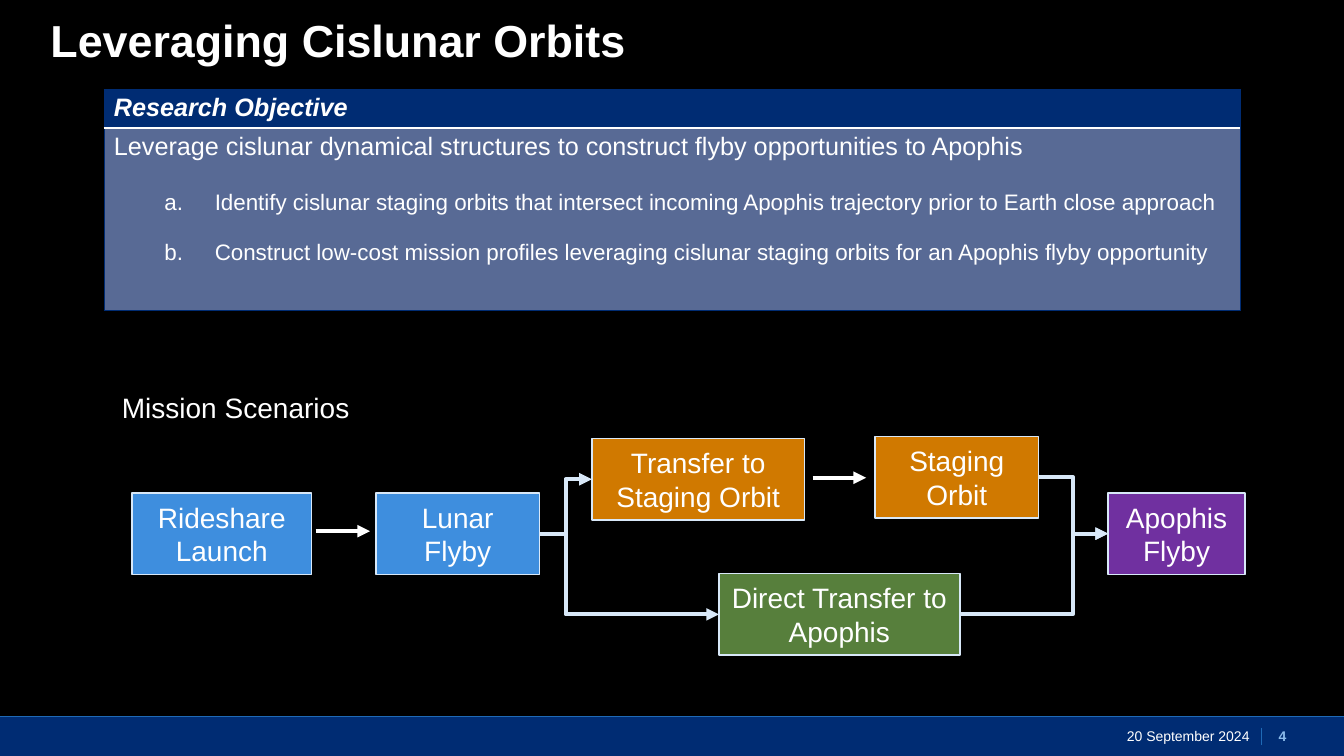
from dataclasses import dataclass

from pptx import Presentation
from pptx.dml.color import RGBColor
from pptx.enum.shapes import MSO_CONNECTOR as Link, MSO_SHAPE as Preset
from pptx.enum.text import MSO_ANCHOR as Anchor, MSO_AUTO_SIZE as AutoSize, PP_ALIGN as Align
from pptx.oxml.ns import qn
from pptx.oxml.xmlchemy import OxmlElement
from pptx.util import Pt

EMU_PER_PX = 9144
FONT = "Arial"
BLACK = RGBColor(0x00, 0x00, 0x00)
WHITE = RGBColor(0xFF, 0xFF, 0xFF)
NAVY = RGBColor(0x00, 0x2C, 0x73)
SLATE = RGBColor(0x58, 0x6A, 0x95)
RULE_BLUE = RGBColor(0x1F, 0x6A, 0xB6)
PALE = RGBColor(0xD8, 0xE8, 0xF8)
NUMBER_BLUE = RGBColor(0x8B, 0xBB, 0xEB)
SKY = RGBColor(0x3E, 0x8E, 0xDE)
ORANGE = RGBColor(0xD0, 0x79, 0x00)
GREEN = RGBColor(0x57, 0x7F, 0x3C)
PURPLE = RGBColor(0x70, 0x30, 0xA0)
LEFT_SITE, RIGHT_SITE = 1, 3


@dataclass(frozen=True)
class Stage:
    text: str
    left: int
    top: int
    width: int
    color: RGBColor
    height: int = 81


@dataclass(frozen=True)
class Branch:
    source: str
    target: str
    bend: int


STAGES = [
    Stage("Rideshare Launch", 131, 489, 178, SKY),
    Stage("Lunar Flyby", 373, 489, 162, SKY),
    Stage("Direct Transfer to Apophis", 713, 569, 239, GREEN),
    Stage("Transfer to Staging Orbit", 587, 435, 211, ORANGE),
    Stage("Staging Orbit", 868, 433, 162, ORANGE),
    Stage("Apophis Flyby", 1099, 489, 136, PURPLE),
]
BRANCHES = [
    Branch("Lunar Flyby", "Transfer to Staging Orbit", 561),
    Branch("Lunar Flyby", "Direct Transfer to Apophis", 561),
    Branch("Staging Orbit", "Apophis Flyby", 1064),
    Branch("Direct Transfer to Apophis", "Apophis Flyby", 1064),
]
OBJECTIVES = [
    ("Identify cislunar staging orbits that intersect incoming Apophis trajectory prior to Earth close approach", 21),
    ("Construct low-cost mission profiles leveraging cislunar staging orbits for an Apophis flyby opportunity", 18),
]


def px(*lengths: int) -> list[int]:
    return [length * EMU_PER_PX for length in lengths]


def write(para, text: str, *, size: int, color=WHITE, bold=False, italic=False, align=Align.LEFT, before=0):
    span = para.add_run()
    span.text = text
    para.alignment = align
    if before:
        para.space_before = Pt(before)
    font = span.font
    font.name, font.size, font.bold, font.italic = FONT, Pt(size), bold, italic
    font.color.rgb = color


def set_margins(frame, across: int, down: int) -> None:
    frame.margin_left = frame.margin_right = across * EMU_PER_PX
    frame.margin_top = frame.margin_bottom = down * EMU_PER_PX


def add_text(page, area: tuple, text: str, *, margins=(10, 5), anchor=Anchor.TOP, **style):
    frame = page.shapes.add_textbox(*px(*area)).text_frame
    frame.word_wrap = True
    frame.vertical_anchor = anchor
    set_margins(frame, *margins)
    write(frame.paragraphs[0], text, **style)


def add_box(page, area: tuple, color: RGBColor):
    box = page.shapes.add_shape(Preset.RECTANGLE, *px(*area))
    box.shadow.inherit = False
    box.fill.solid()
    box.fill.fore_color.rgb = color
    box.line.fill.background()
    return box


def add_stage(page, stage: Stage):
    box = add_box(page, (stage.left, stage.top, stage.width, stage.height), stage.color)
    box.line.color.rgb = PALE
    box.line.width = Pt(1)
    box.text_frame.word_wrap = True
    box.text_frame.vertical_anchor = Anchor.MIDDLE
    write(box.text_frame.paragraphs[0], stage.text, size=20, align=Align.CENTER)
    return box


def add_line(page, ends: tuple, color: RGBColor, weight: float, *, kind=Link.STRAIGHT, arrow=False):
    line = page.shapes.add_connector(kind, *px(*ends))
    line.line.color.rgb = color
    line.line.width = Pt(weight)
    if arrow:
        head = OxmlElement("a:tailEnd")
        head.set("type", "triangle")
        line.line._get_or_add_ln().append(head)
    line._element.spPr.append(OxmlElement("a:effectLst"))
    return line


def add_branch(page, branch: Branch, boxes: dict) -> None:
    line = add_line(page, (0, 0, 0, 0), PALE, 3, kind=Link.ELBOW, arrow=True)
    line.begin_connect(boxes[branch.source], RIGHT_SITE)
    line.end_connect(boxes[branch.target], LEFT_SITE)
    ratio = (branch.bend * EMU_PER_PX - line.begin_x) / (line.end_x - line.begin_x)
    guide = OxmlElement("a:gd")
    guide.set("name", "adj1")
    guide.set("fmla", f"val {round(ratio * 100000)}")
    line._element.spPr.find(qn("a:prstGeom")).get_or_add_avLst().append(guide)


def style_cell(cell, color: RGBColor, borders: dict) -> None:
    cell.fill.solid()
    cell.fill.fore_color.rgb = color
    properties = cell._tc.get_or_add_tcPr()
    for index, side in enumerate("LRTB"):
        line_color, weight = borders.get(side, (NAVY, 0.5))
        border = OxmlElement(f"a:ln{side}")
        border.set("w", str(Pt(weight)))
        fill = OxmlElement("a:solidFill")
        tint = OxmlElement("a:srgbClr")
        tint.set("val", str(line_color))
        fill.append(tint)
        border.append(fill)
        properties.insert(index, border)


def letter_paragraph(para) -> None:
    para.level = 1
    properties = para._p.get_or_add_pPr()
    indent, = px(50)
    properties.set("marL", str(2 * indent))
    properties.set("indent", str(-indent))
    bullet = OxmlElement("a:buAutoNum")
    bullet.set("type", "alphaLcPeriod")
    properties.append(bullet)


def add_objective_table(page) -> None:
    table = page.shapes.add_table(2, 1, *px(103, 89, 1127, 218)).table
    table.horz_banding = False
    table.rows[0].height, table.rows[1].height = px(37, 181)
    header, body = table.cell(0, 0), table.cell(1, 0)
    set_margins(header, 10, 4)
    set_margins(body, 10, 5)
    divider = (WHITE, 1)
    style_cell(header, NAVY, {"B": divider})
    style_cell(body, SLATE, {"T": divider})
    write(header.text_frame.paragraphs[0], "Research Objective", size=18, bold=True, italic=True)
    write(body.text_frame.paragraphs[0],
          "Leverage cislunar dynamical structures to construct flyby opportunities to Apophis", size=18)
    for text, before in OBJECTIVES:
        para = body.text_frame.add_paragraph()
        letter_paragraph(para)
        write(para, text, size=16, before=before)


def add_title(page, text: str) -> None:
    title = page.shapes.title
    title.left, title.top, title.width, title.height = px(50, 19, 1233, 84)
    frame = title.text_frame
    frame.auto_size = AutoSize.NONE
    frame.vertical_anchor = Anchor.TOP
    set_margins(frame, 0, 0)
    frame.paragraphs[0].line_spacing = 0.9
    write(frame.paragraphs[0], text, size=32, bold=True)


def add_footer(page) -> None:
    add_box(page, (0, 711, 1333, 39), NAVY)
    for ends in ((0, 711, 1333, 711), (1251, 722, 1251, 739)):
        add_line(page, ends, RULE_BLUE, 0.5)
    add_text(page, (1252, 711, 40, 39), "4", size=10, color=NUMBER_BLUE, bold=True,
             align=Align.CENTER, anchor=Anchor.MIDDLE, margins=(0, 0))
    add_text(page, (1099, 711, 150, 39), "20 September 2024", size=10,
             align=Align.RIGHT, anchor=Anchor.MIDDLE, margins=(10, 0))


def main() -> None:
    deck = Presentation()
    deck.slide_width, deck.slide_height = px(1333, 750)
    page = deck.slides.add_slide(deck.slide_layouts[5])
    page.background.fill.solid()
    page.background.fill.fore_color.rgb = BLACK
    add_footer(page)
    add_title(page, "Leveraging Cislunar Orbits")
    add_objective_table(page)
    boxes = {stage.text: add_stage(page, stage) for stage in STAGES}
    add_text(page, (111, 383, 667, 44), "Mission Scenarios", size=20)
    for ends in ((313, 527, 367, 527), (806, 474, 859, 474)):
        add_line(page, ends, WHITE, 3, arrow=True)
    for branch in BRANCHES:
        add_branch(page, branch, boxes)
    deck.save("out.pptx")


if __name__ == "__main__":
    main()
